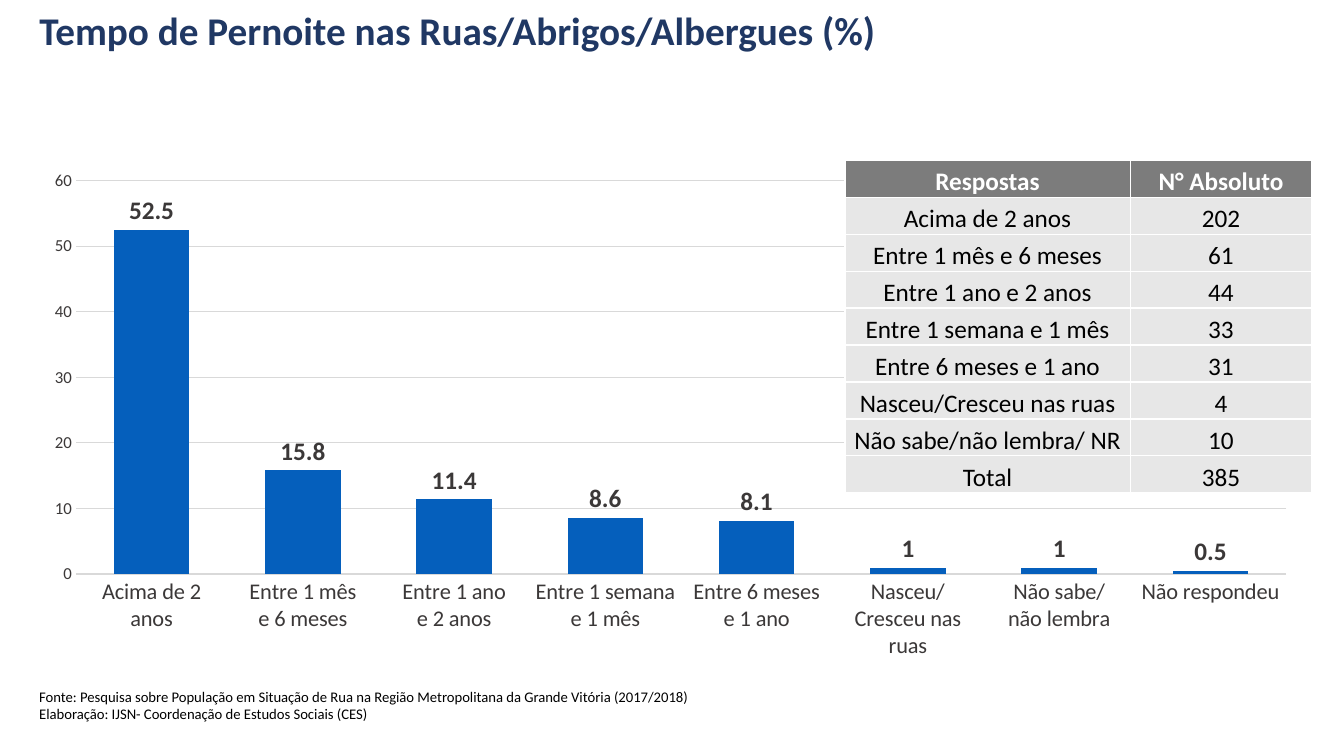
from lxml import etree
from pptx import Presentation
from pptx.chart.data import CategoryChartData
from pptx.dml.color import RGBColor
from pptx.enum.chart import XL_CHART_TYPE as ChartType, XL_LABEL_POSITION as LabelPosition
from pptx.enum.chart import XL_TICK_MARK as TickMark
from pptx.enum.text import MSO_ANCHOR as Anchor, PP_ALIGN as Align
from pptx.oxml.ns import qn
from pptx.util import Inches, Pt

NAVY = RGBColor(0x20, 0x38, 0x64)
BLUE = RGBColor(0x05, 0x5F, 0xBC)
BLACK = RGBColor(0x00, 0x00, 0x00)
WHITE = RGBColor(0xFF, 0xFF, 0xFF)
CHARCOAL = RGBColor(0x3B, 0x38, 0x38)
GRID_GRAY = RGBColor(0xD9, 0xD9, 0xD9)
HEADER_GRAY = RGBColor(0x7C, 0x7C, 0x7C)
CELL_GRAY = RGBColor(0xE7, 0xE7, 0xE7)

LEFT, WIDTH = Inches(0.29), Inches(12.72)
CONTENT_TOP = Inches(1.59)

PERCENTAGES = [
    ("Acima de 2 anos", 52.5),
    ("Entre 1 mês\ne 6 meses", 15.8),
    ("Entre 1 ano\ne 2 anos", 11.4),
    ("Entre 1 semana\ne 1 mês", 8.6),
    ("Entre 6 meses\ne 1 ano", 8.1),
    ("Nasceu/Cresceu nas ruas", 1),
    ("Não sabe/\nnão lembra", 1),
    ("Não respondeu", 0.5),
]
ANSWERS = [
    ("Respostas", "N° Absoluto"),
    ("Acima de 2 anos", "202"),
    ("Entre 1 mês e 6 meses", "61"),
    ("Entre 1 ano e 2 anos", "44"),
    ("Entre 1 semana e 1 mês", "33"),
    ("Entre 6 meses e 1 ano", "31"),
    ("Nasceu/Cresceu nas ruas", "4"),
    ("Não sabe/não lembra/ NR", "10"),
    ("Total", "385"),
]
SOURCE = (
    "Fonte: Pesquisa sobre População em Situação de Rua na Região Metropolitana "
    "da Grande Vitória (2017/2018)\n"
    "Elaboração: IJSN- Coordenação de Estudos Sociais (CES)"
)


def style_font(font, size, color, bold=False):
    font.name = "Calibri"
    font.size = Pt(size)
    font.bold = bold
    font.color.rgb = color


def style_runs(text_frame, size, color, bold=False, align=Align.LEFT):
    for paragraph in text_frame.paragraphs:
        paragraph.alignment = align
        for run in paragraph.runs:
            style_font(run.font, size, color, bold)


def set_title(slide, text):
    title = slide.shapes.title
    title.left, title.top, title.width, title.height = LEFT, Inches(0.03), WIDTH, Inches(0.62)
    title.text_frame.text = text
    title.text_frame.vertical_anchor = Anchor.MIDDLE
    title.text_frame.paragraphs[0].line_spacing = 0.8
    style_runs(title.text_frame, 28, NAVY, bold=True)


def add_source(slide, text):
    text_frame = slide.shapes.add_textbox(LEFT, Inches(6.64), WIDTH, Inches(0.58)).text_frame
    text_frame.word_wrap = True
    text_frame.vertical_anchor = Anchor.BOTTOM
    text_frame.text = text
    style_runs(text_frame, 10.5, BLACK)


def add_column_chart(slide, rows):
    data = CategoryChartData()
    data.categories = [category for category, _ in rows]
    data.add_series("Series 1", [value for _, value in rows])
    chart = slide.shapes.add_chart(
        ChartType.COLUMN_CLUSTERED, LEFT, CONTENT_TOP, WIDTH, Inches(5.06), data
    ).chart
    chart.has_legend = False
    chart.has_title = False
    style_font(chart.font, 10, BLACK)

    # Columns and their labels
    plot = chart.plots[0]
    plot.gap_width, plot.overlap = 100, -24
    plot.vary_by_categories = False
    fill = plot.series[0].format.fill
    fill.solid()
    fill.fore_color.rgb = BLUE
    plot.has_data_labels = True
    labels = plot.data_labels
    labels.show_value = True
    labels.position = LabelPosition.OUTSIDE_END
    style_font(labels.font, 18, CHARCOAL, bold=True)

    # Axes
    for axis, size in ((chart.category_axis, 16), (chart.value_axis, 12)):
        axis.major_tick_mark = axis.minor_tick_mark = TickMark.NONE
        style_font(axis.tick_labels.font, size, CHARCOAL)
    category_line = chart.category_axis.format.line
    category_line.color.rgb = GRID_GRAY
    category_line.width = Pt(1)
    value_axis = chart.value_axis
    value_axis.minimum_scale, value_axis.maximum_scale = 0, 60
    value_axis.major_unit = 10
    value_axis.format.line.fill.background()
    grid_line = value_axis.major_gridlines.format.line
    grid_line.color.rgb = GRID_GRAY
    grid_line.width = Pt(0.75)


def add_cell_borders(cell, color):
    properties = cell._tc.get_or_add_tcPr()
    for side in ("a:lnL", "a:lnR", "a:lnT", "a:lnB"):
        line = etree.SubElement(properties, qn(side), w=str(Pt(1)))
        solid = etree.SubElement(line, qn("a:solidFill"))
        etree.SubElement(solid, qn("a:srgbClr"), val=str(color))


def fill_cell(cell, text, is_header):
    add_cell_borders(cell, WHITE)
    cell.fill.solid()
    cell.fill.fore_color.rgb = HEADER_GRAY if is_header else CELL_GRAY
    cell.margin_left = cell.margin_right = cell.margin_top = Inches(0.01)
    cell.margin_bottom = 0
    cell.vertical_anchor = Anchor.BOTTOM
    cell.text_frame.text = text
    style_runs(cell.text_frame, 18, WHITE if is_header else BLACK, is_header, Align.CENTER)


def add_answer_table(slide, rows):
    table = slide.shapes.add_table(
        len(rows), 2, Inches(8.38), CONTENT_TOP, Inches(4.63), Inches(3.3)
    ).table
    for column, width in zip(table.columns, (2.83, 1.8)):
        column.width = Inches(width)
    for row_index, row in enumerate(rows):
        for column_index, text in enumerate(row):
            fill_cell(table.cell(row_index, column_index), text, row_index == 0)


def main():
    presentation = Presentation()
    presentation.slide_width, presentation.slide_height = Inches(13.33), Inches(7.5)
    slide = presentation.slides.add_slide(presentation.slide_layouts[5])
    set_title(slide, "Tempo de Pernoite nas Ruas/Abrigos/Albergues (%)")
    add_column_chart(slide, PERCENTAGES)
    add_source(slide, SOURCE)
    add_answer_table(slide, ANSWERS)
    presentation.save("out.pptx")


if __name__ == "__main__":
    main()
